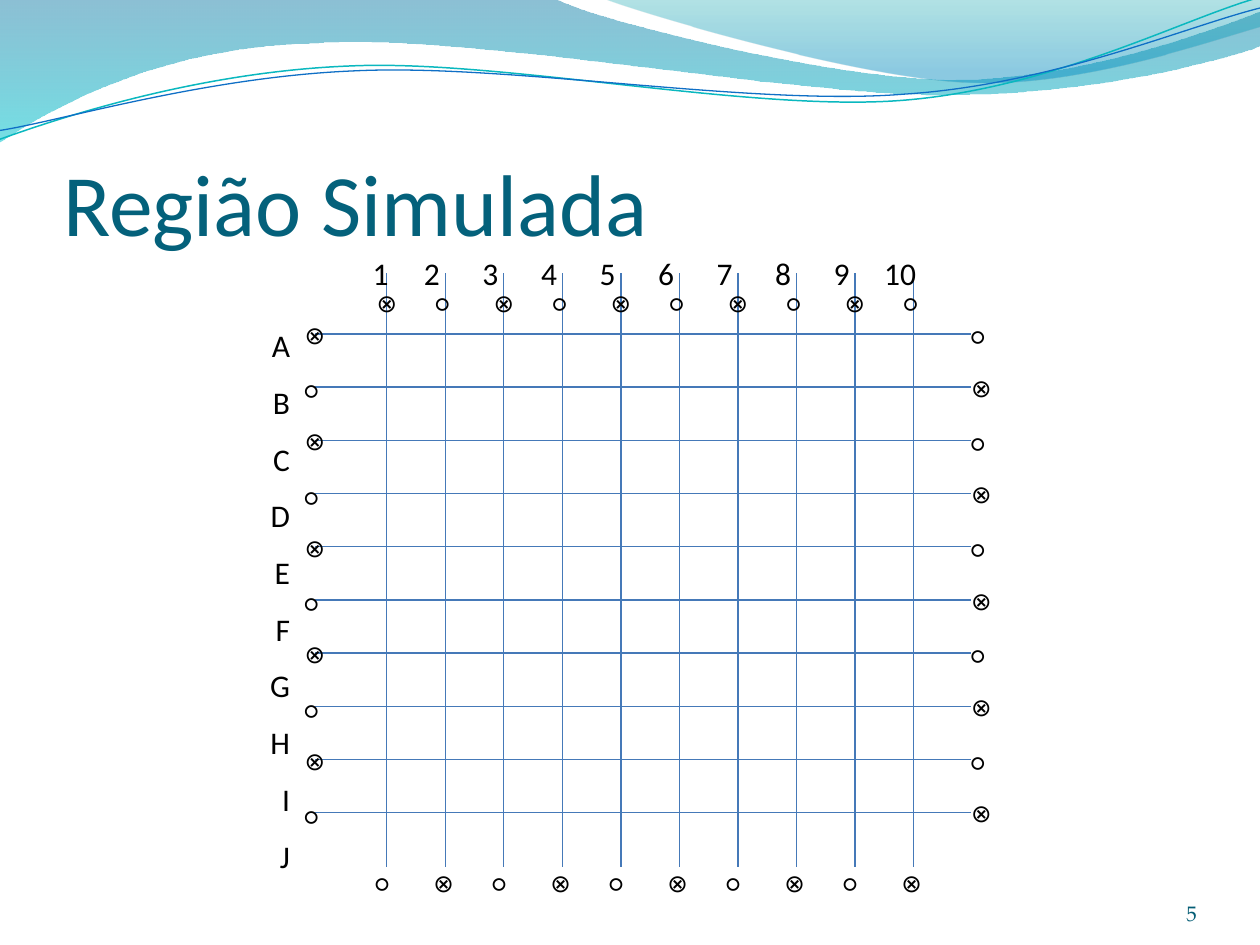
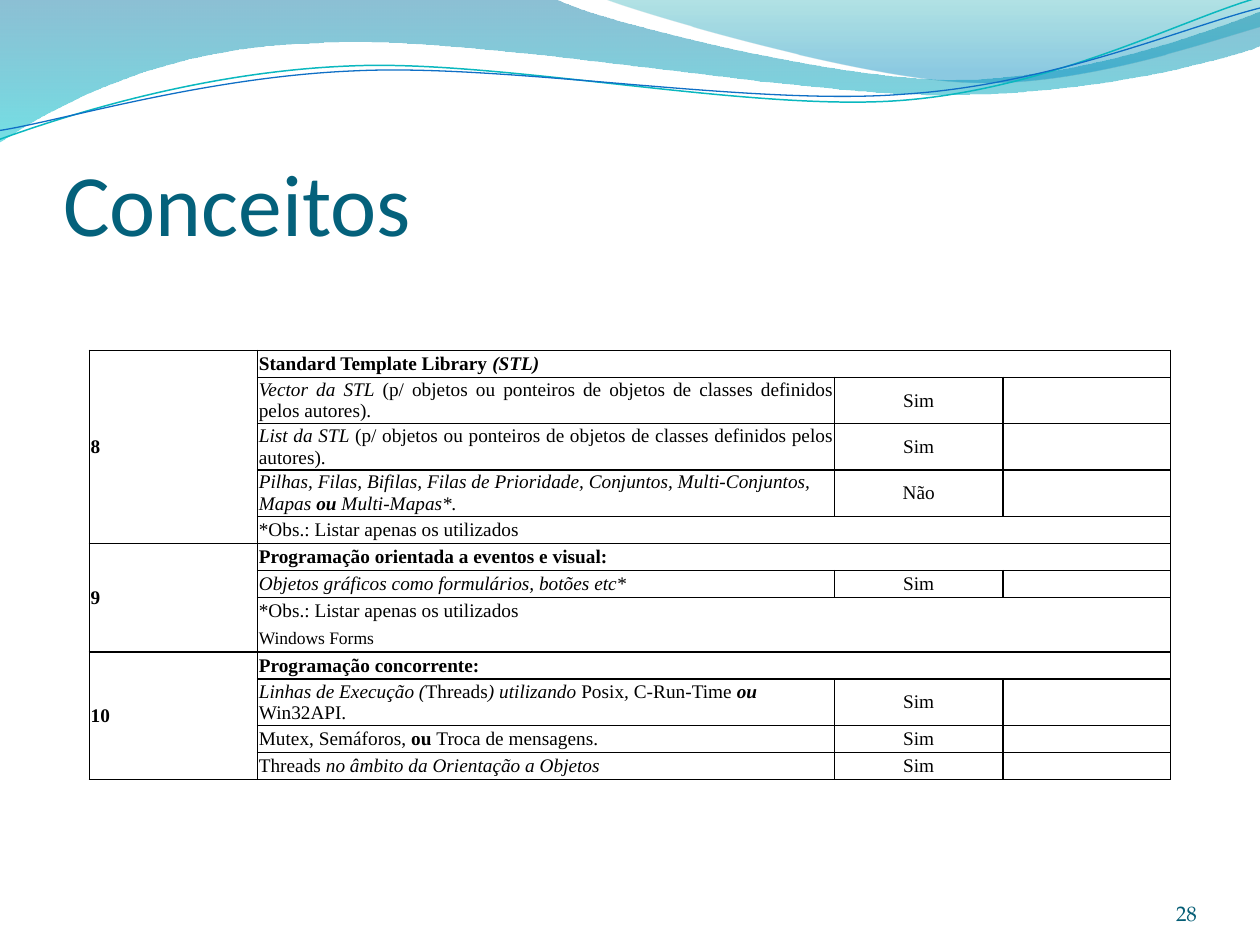
from collections import namedtuple
from dataclasses import dataclass

from lxml.etree import SubElement
from pptx import Presentation
from pptx.dml.color import RGBColor
from pptx.enum.shapes import MSO_CONNECTOR
from pptx.enum.text import MSO_ANCHOR, MSO_AUTO_SIZE, PP_ALIGN
from pptx.oxml.ns import qn
from pptx.util import Inches, Pt

Box = namedtuple("Box", "left top width height")


@dataclass(frozen=True)
class Theme:
    title: str = "04617B"
    number: str = "045D75"
    text: str = "000000"
    lattice: str = "4579B8"
    body_font: str = "Calibri"
    number_font: str = "TeX Gyre Pagella"
    table_font: str = "Times New Roman"
    title_size: float = 50
    label_size: float = 18
    marker_size: float = 14
    number_size: float = 12
    table_size: float = 11
    note_size: float = 10
    hairline: float = 0.75
    border: float = 1


THEME = Theme()
PAGE = Box(0, 0, 10, 7.5)
TITLE = Box(0.5, 0.77, 9, 1.25)
NUMBER = Box(8.67, 6.95, 0.83, 0.4)

# Outlines: a start point, then line ends (2 numbers) or cubic curves (6 numbers).
LEFT_WAVE = [
    (0, 0), (4.4, -0.01), (4.76, 0.17, 6.64, 0.63, 7.58, 0.63),
    (8.53, 0.63, 9.58, 0.26, 10, 0.09), (10.01, 0.36),
    (9.83, 0.44, 8.7, 0.76, 7.46, 0.75), (6.22, 0.75, 3.82, 0.28, 2.57, 0.34),
    (1.29, 0.36, 0.46, 0.83, -0.01, 1.13)]
RIGHT_WAVE = [
    (4.79, -0.01), (5.09, 0.11, 6.82, 0.62, 7.69, 0.65),
    (8.56, 0.69, 9.61, 0.32, 10, 0.21), (10, 0)]
# The strands are given level and then tilted.
STRAND_TILT = 357.3
TEAL_STRAND = [
    (-0.02, 0.87), (0.47, 0.72, 1.58, 0.41, 2.78, 0.42),
    (3.96, 0.42, 5.91, 0.93, 7.12, 0.9), (8.32, 0.87, 9.4, 0.36, 10, 0.22)]
BLUE_STRAND = [
    (-0.02, 0.8), (0.46, 0.75, 1.64, 0.45, 2.83, 0.46),
    (4.04, 0.46, 5.96, 0.89, 7.16, 0.85), (8.35, 0.83, 9.42, 0.42, 10.02, 0.3)]
# Fill stops: position, colour, opacity in percent.
WAVES = [
    (LEFT_WAVE, [(0, "0074A1", 45), (1, "00C6CF", 55)]),
    (RIGHT_WAVE, [(0, "00A1A9", 30), (0.8, "008BBF", 45)])]
STRANDS = [(TEAL_STRAND, "0AB8BF", 0.85), (BLUE_STRAND, "0F6FC6", 0.75)]

# Table rows: spans of (text, style), answer (None spans the row), justified.
CLASSES = "(p/ objetos ou ponteiros de objetos de classes definidos pelos autores)."
LISTED = ([("*Obs.: Listar apenas os utilizados", "")], None, False)
CONCEPTS = [
    ("8", [
        ([("Standard Template Library", "b"), (" (STL)", "bi")], None, False),
        ([("Vector da STL ", "i"), (CLASSES, "")], "Sim", True),
        ([("List da STL ", "i"), (CLASSES, "")], "Sim", True),
        ([("Pilhas, Filas, Bifilas, Filas de Prioridade, Conjuntos, "
           "Multi-Conjuntos, Mapas ", "i"), ("ou", "bi"), (" Multi-Mapas*.", "i")],
         "Não", False),
        LISTED]),
    ("9", [
        ([("Programação orientada a eventos e visual:", "b")], None, False),
        ([("Objetos gráficos como formulários, botões etc", "i"), ("*", "")],
         "Sim", False),
        LISTED,
        ([("Windows Forms", "small")], None, False)]),
    ("10", [
        ([("Programação concorrente:", "b")], None, False),
        ([("Linhas de Execução (", "i"), ("Threads", ""), (") utilizando ", "i"),
          ("Posix", ""), (", ", "i"), ("C-Run-Time ", ""), ("ou ", "bi"),
          ("Win32API", ""), (".", "i")], "Sim", False),
        ([("Mutex, Semáforos, ", ""), ("ou ", "b"), ("Troca de mensagens.", "")],
         "Sim", False),
        ([("Threads", ""), (" no âmbito da Orientação a Objetos", "i")],
         "Sim", False)]),
]


def emu(box):
    return [Inches(length) for length in box]


def add_span(para, text, font, size, color, bold=False, italic=False):
    span = para.add_run()
    span.text = text
    span.font.name, span.font.size = font, Pt(size)
    span.font.bold, span.font.italic = bold, italic
    span.font.color.rgb = RGBColor.from_string(color)


def set_insets(holder, left, top, right, bottom):
    holder.margin_left, holder.margin_top = Inches(left), Inches(top)
    holder.margin_right, holder.margin_bottom = Inches(right), Inches(bottom)


def add_label(page, box, lines, size, font=THEME.body_font, color=THEME.text,
              align=PP_ALIGN.LEFT, spacing=None):
    frame = page.shapes.add_textbox(*emu(box)).text_frame
    frame.word_wrap = True
    for index, line in enumerate(lines):
        para = frame.add_paragraph() if index else frame.paragraphs[0]
        para.alignment, para.line_spacing = align, spacing
        add_span(para, line, font, size, color)
    return frame


def add_outline(page, box, outline, close):
    """Build the outline through all its points, then bend the cubic parts."""
    start, *rest = [(Inches(box.left + x), Inches(box.top + y))
                    for segment in outline
                    for x, y in zip(segment[::2], segment[1::2])]
    builder = page.shapes.build_freeform(*start)
    builder.add_line_segments(rest, close=close)
    shape = builder.convert_to_shape()
    shape.shadow.inherit = False
    lines = iter(list(shape._element.iter(qn("a:lnTo"))))
    for segment in outline[1:]:
        first = next(lines)
        if len(segment) == 6:
            first.tag = qn("a:cubicBezTo")
            for _ in range(2):
                line = next(lines)
                first.append(line[0])
                line.getparent().remove(line)
    return shape


def add_band(page, box):
    for outline, stops in WAVES:
        wave = add_outline(page, box, outline, True)
        wave.line.fill.background()
        wave.fill.gradient()
        wave.fill.gradient_angle = 270
        for stop, (position, color, _) in zip(wave.fill.gradient_stops, stops):
            stop.position = position
            stop.color.rgb = RGBColor.from_string(color)
        tints = wave._element.spPr.iter(qn("a:srgbClr"))
        for tint, (_, _, opacity) in zip(tints, stops):
            SubElement(tint, qn("a:alpha"), val=str(opacity * 1000))
    for outline, color, weight in STRANDS:
        strand = add_outline(page, box, outline, False)
        strand.rotation = STRAND_TILT
        strand.fill.background()
        strand.line.color.rgb = RGBColor.from_string(color)
        strand.line.width = Pt(weight)


def add_page(deck, title, number):
    page = deck.slides.add_slide(deck.slide_layouts[5])
    add_band(page, PAGE)
    holder = page.shapes.title
    holder.left, holder.top, holder.width, holder.height = emu(TITLE)
    frame = holder.text_frame
    frame.auto_size, frame.word_wrap = MSO_AUTO_SIZE.NONE, True
    frame.vertical_anchor = MSO_ANCHOR.BOTTOM
    set_insets(frame, 0, 0.05, 0, 0)
    frame.paragraphs[0].alignment = PP_ALIGN.LEFT
    add_span(frame.paragraphs[0], title, THEME.body_font, THEME.title_size, THEME.title)
    footer = add_label(page, NUMBER, [number], THEME.number_size, THEME.number_font,
                       THEME.number, PP_ALIGN.RIGHT)
    footer.vertical_anchor = MSO_ANCHOR.BOTTOM
    set_insets(footer, 0, 0, 0, 0)
    return page


def add_lattice_line(page, x1, y1, x2, y2):
    line = page.shapes.add_connector(MSO_CONNECTOR.STRAIGHT, *emu((x1, y1, x2, y2)))
    line.line.color.rgb = RGBColor.from_string(THEME.lattice)
    line.line.width = Pt(THEME.hairline)
    SubElement(line._element.spPr, qn("a:effectLst"))


def add_region(page, box, count=10):
    """Draw the lattice in the box, with its labels and the markers at line ends."""
    left, top, width, height = box
    right, bottom = left + width, top + height
    pitch_x, pitch_y = 4.18 / (count - 1), 3.8 / (count - 1)
    for index in range(count):
        x, y = left + 0.57 + index * pitch_x, top + 0.48 + index * pitch_y
        add_lattice_line(page, left, y, right, y)
        add_lattice_line(page, x, top, x, bottom)

    add_label(page, Box(left - 0.47, top + 0.22, 0.37, 4.35), "ABCDEFGHIJ",
              THEME.label_size, align=PP_ALIGN.RIGHT, spacing=1.5)
    numbers = "\t".join(str(index + 1) for index in range(count))
    heads = add_label(page, Box(left + 0.36, top - 0.2, 5.18, 0.38), [numbers],
                      THEME.label_size)
    tabs = SubElement(heads.paragraphs[0]._p.get_or_add_pPr(), qn("a:tabLst"))
    for index in range(count - 1):
        SubElement(tabs, qn("a:tab"), pos=str(Inches(0.47 + index * pitch_x)), algn="ctr")

    for pair in range(count // 2):
        across, down = 2 * pair * pitch_x, 2 * pair * pitch_y
        markers = [
            ("⊗", left - 0.18, top + 0.32 + down), ("○", left - 0.18, top + 0.76 + down),
            ("○", right - 0.1, top + 0.33 + down), ("⊗", right - 0.1, top + 0.74 + down),
            ("⊗", left + 0.39 + across, top + 0.07), ("○", left + 0.86 + across, top + 0.07),
            ("○", left + 0.38 + across, bottom - 0.04),
            ("⊗", left + 0.84 + across, bottom - 0.04)]
        for symbol, x, y in markers:
            add_label(page, Box(x, y, 0.38, 0.28), [symbol], THEME.marker_size)


def format_cell(cell, open_sides):
    set_insets(cell, 0.01, 0, 0.01, 0)
    cell.vertical_anchor = MSO_ANCHOR.MIDDLE
    properties = cell._tc.get_or_add_tcPr()
    for side in "LRTB":
        line = SubElement(properties, qn("a:ln" + side), w=str(Pt(THEME.border)))
        if side in open_sides:
            SubElement(line, qn("a:noFill"))
        else:
            SubElement(SubElement(line, qn("a:solidFill")), qn("a:srgbClr"), val=THEME.text)
    cell.fill.background()
    if not cell.text_frame.text:
        SubElement(cell.text_frame.paragraphs[0]._p, qn("a:endParaRPr"),
                   sz=str(THEME.table_size * 100))


def fill_cell(cell, spans, align):
    para = cell.text_frame.paragraphs[0]
    para.alignment = align
    for text, style in spans:
        size = THEME.note_size if style == "small" else THEME.table_size
        add_span(para, text, THEME.table_font, size, THEME.text,
                 style in ("b", "bi"), style in ("i", "bi"))


def add_concepts(page, box):
    row_count = sum(len(rows) for _, rows in CONCEPTS)
    frame = page.shapes.add_table(row_count, 4, *emu(box))
    table = frame.table
    table.first_row = table.horz_banding = False
    for column, width in zip(table.columns, (1.335, 4.58, 1.335, 1.33)):
        column.width = Inches(width)
    for row in table.rows:
        row.height = Inches(2.8 / row_count)
    frame.height = Inches(box.height)
    open_sides = {}
    at = 0
    for number, rows in CONCEPTS:
        table.cell(at, 0).merge(table.cell(at + len(rows) - 1, 0))
        fill_cell(table.cell(at, 0), [(number, "b")], PP_ALIGN.JUSTIFY)
        for spans, answer, justified in rows:
            align = PP_ALIGN.JUSTIFY if justified else PP_ALIGN.LEFT
            fill_cell(table.cell(at, 1), spans, align)
            if answer:
                fill_cell(table.cell(at, 2), [(answer, "")], PP_ALIGN.CENTER)
            else:
                table.cell(at, 1).merge(table.cell(at, 3))
            if spans[0][1] == "small":
                open_sides.update({at - 1: "B", at: "T"})
            at += 1
    for row in range(row_count):
        for column in range(4):
            format_cell(table.cell(row, column), open_sides.get(row, "") if column else "")


def main():
    deck = Presentation()
    deck.slide_width, deck.slide_height = Inches(PAGE.width), Inches(PAGE.height)
    add_region(add_page(deck, "Região Simulada", "5"), Box(2.5, 2.17, 5.21, 4.71))
    add_concepts(add_page(deck, "Conceitos", "28"), Box(0.71, 2.78, 8.58, 3.47))
    deck.save("out.pptx")


if __name__ == "__main__":
    main()
